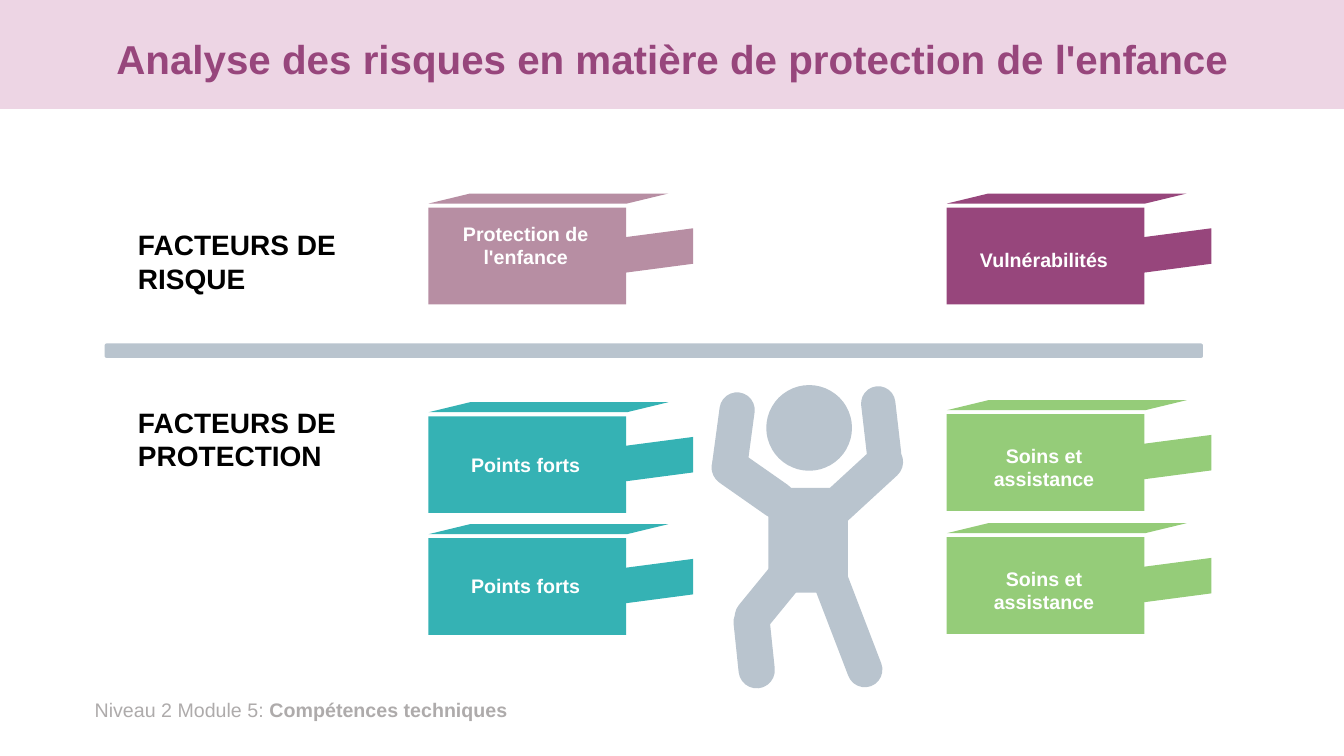
from dataclasses import dataclass

from pptx import Presentation
from pptx.dml.color import RGBColor
from pptx.enum import shapes, text
from pptx.util import Inches, Pt


@dataclass(frozen=True)
class Theme:
    font: str = "Arial"
    band: str = "EDD5E4"
    plum: str = "97467C"
    mauve: str = "B78EA3"
    teal: str = "35B2B4"
    green: str = "95CC79"
    steel: str = "B9C4CE"
    gray: str = "AEABAB"
    black: str = "000000"
    white: str = "FFFFFF"
    title: float = 28.8
    head: float = 20
    body: float = 14


THEME = Theme()
KIND = shapes.MSO_SHAPE
ALIGN = text.PP_ALIGN


def style(run, size, color, bold=True):
    font = run.font
    font.name, font.size, font.bold = THEME.font, Pt(size), bold
    font.color.rgb = RGBColor.from_string(color)


def draw(host, kind, box, fill, adj=None, turn=0):
    shape = host.shapes.add_shape(kind, *map(Inches, box))
    shape.shadow.inherit = False
    shape.fill.solid()
    shape.fill.fore_color.rgb = RGBColor.from_string(fill)
    shape.line.fill.background()
    shape.rotation = turn
    if adj is not None:
        shape.adjustments[0] = adj
    return shape


def label(host, box, words, size, color, align=ALIGN.LEFT):
    frame = host.shapes.add_textbox(*map(Inches, box)).text_frame
    frame.word_wrap = True
    frame.text = words
    para = frame.paragraphs[0]
    para.alignment = align
    style(para.runs[0], size, color)
    return para


def header(slide, box, words):
    left, top, width, height = box
    band = draw(slide, KIND.RECTANGLE, box, THEME.band)
    slide.shapes._spTree.insert(2, band._element)
    title = slide.shapes.title
    title.left, title.top = Inches(left + 0.92), Inches(top + 0.13)
    title.width, title.height = Inches(width - 1.83), Inches(height - 0.13)
    frame = title.text_frame
    frame.text = words
    frame.word_wrap = True
    frame.auto_size = text.MSO_AUTO_SIZE.NONE
    frame.vertical_anchor = text.MSO_ANCHOR.MIDDLE
    para = frame.paragraphs[0]
    para.alignment, para.line_spacing = ALIGN.CENTER, 0.9
    style(para.runs[0], THEME.title, THEME.plum)


def footer(slide, box, lead, topic):
    para = label(slide, box, lead, THEME.body, THEME.gray)
    para.runs[0].font.bold = False
    run = para.add_run()
    run.text = topic
    style(run, THEME.body, THEME.gray)


def block(slide, box, words, color, drop):
    left, top, width, height = box
    group = slide.shapes.add_group_shape()
    draw(group, KIND.RECTANGLE, box, color)
    side = draw(group, KIND.PARALLELOGRAM,
                (left + width + 0.11, top + 0.09, 0.44, 0.67), color, 0.2, 270)
    side._element.spPr.xfrm.set("flipH", "1")
    draw(group, KIND.PARALLELOGRAM,
         (left, top - 0.14, width + 0.42, 0.1), color, 4.13)
    label(group, (left + 0.15, top + drop, 1.63, 0.25), words,
          THEME.body, THEME.white, ALIGN.CENTER)


def person(slide, box):
    left, top, width, height = box
    group = slide.shapes.add_group_shape()
    draw(group, KIND.OVAL, (left + 0.55, top, 0.85, 0.85), THEME.steel)
    draw(group, KIND.ROUNDED_RECTANGLE,
         (left + 0.57, top + 1.02, 0.79, 1.04), THEME.steel, 0)
    limbs = [
        (0.44, 1.55, 0.36, 1.0, 39.3),
        (1.18, 1.72, 0.35, 1.31, 159),
        (0.25, 2.17, 0.36, 0.84, 174),
        (1.52, 0.01, 0.34, 0.85, 353.4),
        (1.29, 0.47, 0.36, 1.06, 47.4),
        (0.24, 0.51, 0.37, 0.94, 125),
        (0.05, 0.07, 0.35, 0.89, 7.7),
    ]
    for dx, dy, wide, high, turn in limbs:
        draw(group, KIND.ROUNDED_RECTANGLE, (left + dx, top + dy, wide, high),
             THEME.steel, 0.5, turn)


def scale(slide, box):
    left, top, width, height = box
    for row, words in ((2.21, "FACTEURS DE RISQUE"),
                       (3.97, "FACTEURS DE PROTECTION")):
        label(slide, (left + 0.24, row, 2.2, 0.77), words,
              THEME.head, THEME.black)
    beam = draw(slide, KIND.ROUNDED_RECTANGLE, box, THEME.steel, 0.17)
    beam.line.color.rgb = RGBColor.from_string(THEME.white)
    beam.line.width = Pt(1)
    person(slide, (left + 6.02, top + 0.42, 1.9, 3.03))
    near, far = left + 3.22, left + 8.36
    blocks = [
        (near, 2.06, "Protection de l'enfance", THEME.mauve, 0.09),
        (far, 2.06, "Vulnérabilités", THEME.plum, 0.35),
        (near, 4.13, "Points forts", THEME.teal, 0.31),
        (far, 4.11, "Soins et assistance", THEME.green, 0.24),
        (near, 5.34, "Points forts", THEME.teal, 0.3),
        (far, 5.33, "Soins et assistance", THEME.green, 0.24),
    ]
    for x, y, words, color, drop in blocks:
        block(slide, (x, y, 1.96, 0.96), words, color, drop)


def main():
    deck = Presentation()
    deck.slide_width, deck.slide_height = Inches(13.33), Inches(7.5)
    slide = deck.slides.add_slide(deck.slide_layouts[5])
    header(slide, (0, 0, 13.33, 1.08),
           "Analyse des risques en matière de protection de l'enfance")
    footer(slide, (0.84, 6.87, 4.55, 0.34),
           "Niveau 2 Module 5: ", "Compétences techniques")
    scale(slide, (1.03, 3.4, 10.91, 0.16))
    deck.save("out.pptx")


if __name__ == "__main__":
    main()
